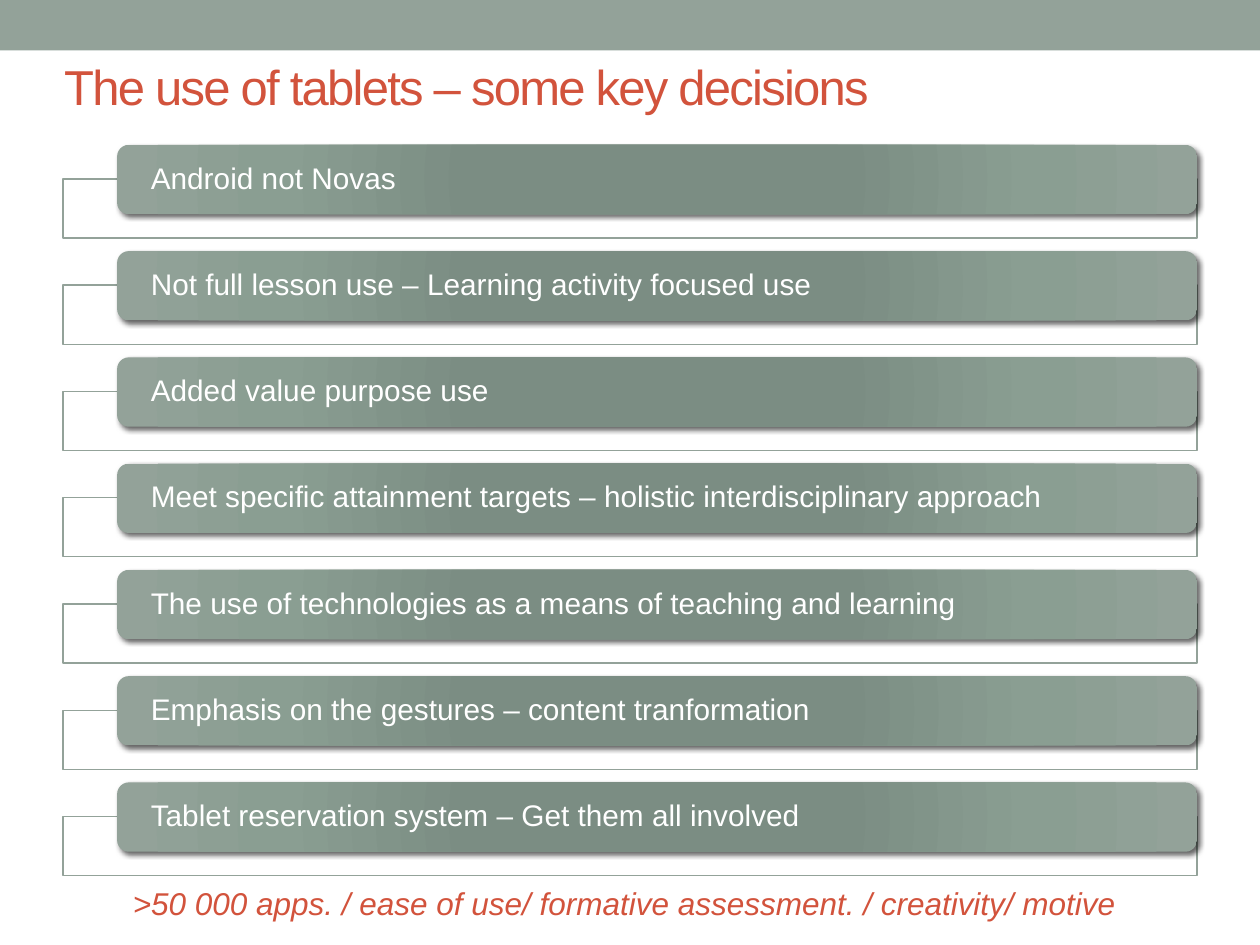
from pptx import Presentation
from pptx.dml.color import RGBColor
from pptx.enum.shapes import MSO_SHAPE
from pptx.enum.text import MSO_ANCHOR, PP_ALIGN
from pptx.oxml import parse_xml
from pptx.oxml.ns import nsdecls, qn
from pptx.util import Inches, Pt

SAGE, RED, WHITE = "93A299", "D2533C", "FFFFFF"
STOPS = ((0, "7B8E82"), (34, "7B8D83"), (70, "8A9E92"), (100, SAGE))
ITEMS = (
    "Android not Novas",
    "Not full lesson use – Learning activity focused use",
    "Added value purpose use",
    "Meet specific attainment targets – holistic interdisciplinary approach",
    "The use of technologies as a means of teaching and learning",
    "Emphasis on the gestures – content tranformation",
    "Tablet reservation system – Get them all involved",
)
TOP, LAST = 1.15, 6.21
STEP = (LAST - TOP) / (len(ITEMS) - 1)


def color(code):
    """Turn a hex string into a colour."""
    return RGBColor.from_string(code)


def assign(target, values):
    """Set each attribute in a dict of values."""
    for name, value in values.items():
        setattr(target, name, value)


def place(box):
    """Turn left, top, width and height into lengths."""
    return [Inches(size) for size in box]


class Deck:
    """Hold the style and the current slide."""

    font = "Arial"

    def __init__(self, slide):
        """Keep the slide to draw on."""
        self.slide = slide

    def label(self, shape, text, size, code, frame=None, para=None, **style):
        """Put one formatted paragraph in a shape."""
        body = shape.text_frame
        body.text = text
        assign(body, {"word_wrap": True, **(frame or {})})
        line = body.paragraphs[0]
        assign(line, {"alignment": PP_ALIGN.LEFT, **(para or {})})
        run = line.runs[0]
        assign(run.font, {"name": self.font, "size": Pt(size), **style})
        run.font.color.rgb = color(code)
        return run

    def title(self, text, box):
        """Place and fill the title."""
        shape = self.slide.shapes.title
        assign(shape, dict(zip(("left", "top", "width", "height"), place(box))))
        run = self.label(shape, text, 28, RED,
                         {"vertical_anchor": MSO_ANCHOR.MIDDLE})
        run._r.get_or_add_rPr().set("spc", "-100")

    def rect(self, box, fill, edge=None):
        """Draw a plain rectangle, with an edge if asked."""
        shape = self.slide.shapes.add_shape(MSO_SHAPE.RECTANGLE, *place(box))
        shape.shadow.inherit = False
        shape.fill.solid()
        shape.fill.fore_color.rgb = color(fill)
        if edge:
            shape.line.color.rgb = color(edge)
            shape.line.width = Pt(0.75)
        else:
            shape.line.fill.background()
        return shape

    def frame(self, box):
        """Draw a faint white frame with a sage edge."""
        shape = self.rect(box, WHITE, SAGE)
        tint = shape._element.spPr.find(qn("a:solidFill"))[0]
        tint.append(parse_xml(f'<a:alpha {nsdecls("a")} val="90000"/>'))

    def bar(self, box, text):
        """Draw a shaded round bar with its text."""
        shape = self.slide.shapes.add_shape(
            MSO_SHAPE.ROUNDED_RECTANGLE, *place(box))
        shape.shadow.inherit = False
        shape.line.fill.background()
        stops = "".join(
            f'<a:gs pos="{pos * 1000}"><a:srgbClr val="{code}"/></a:gs>'
            for pos, code in STOPS)
        props = shape._element.spPr
        props.find(qn("a:prstGeom")).addnext(parse_xml(
            f'<a:gradFill {nsdecls("a")} rotWithShape="1">'
            f'<a:gsLst>{stops}</a:gsLst><a:path path="circle">'
            '<a:fillToRect l="100000" t="100000" r="100000" b="100000"/>'
            '</a:path></a:gradFill>'))
        props.find(qn("a:effectLst")).append(parse_xml(
            f'<a:outerShdw {nsdecls("a")} blurRad="{Pt(3)}" dist="{Pt(2)}" '
            'dir="2700000" rotWithShape="0"><a:srgbClr val="000000">'
            '<a:alpha val="60000"/></a:srgbClr></a:outerShdw>'))
        self.label(shape, text, 17, WHITE, {
            "vertical_anchor": MSO_ANCHOR.MIDDLE,
            "margin_left": Inches(0.24), "margin_right": Inches(0.24),
            "margin_top": 0, "margin_bottom": 0}, {"line_spacing": 0.9})

    def note(self, text, box):
        """Add a centred line in italics."""
        shape = self.slide.shapes.add_textbox(*place(box))
        self.label(shape, text, 18, RED,
                   para={"alignment": PP_ALIGN.CENTER}, italic=True)


def main():
    """Build the slide and save it."""
    show = Presentation()
    assign(show, {"slide_width": Inches(10), "slide_height": Inches(7.5)})
    deck = Deck(show.slides.add_slide(show.slide_layouts[5]))
    deck.rect((0, 0, 10, 0.4), SAGE)
    deck.title("The use of tablets – some key decisions", (0.41, 0.36, 9, 0.65))
    for row, text in enumerate(ITEMS):
        top = TOP + row * STEP
        deck.frame((0.5, top + 0.27, 9, 0.47))
        deck.bar((0.93, top, 8.57, 0.55), text)
    deck.note(">50 000 apps. / ease of use/ formative assessment. "
              "/ creativity/ motive", (0.41, 6.97, 9.09, 0.4))
    show.save("out.pptx")


if __name__ == "__main__":
    main()
